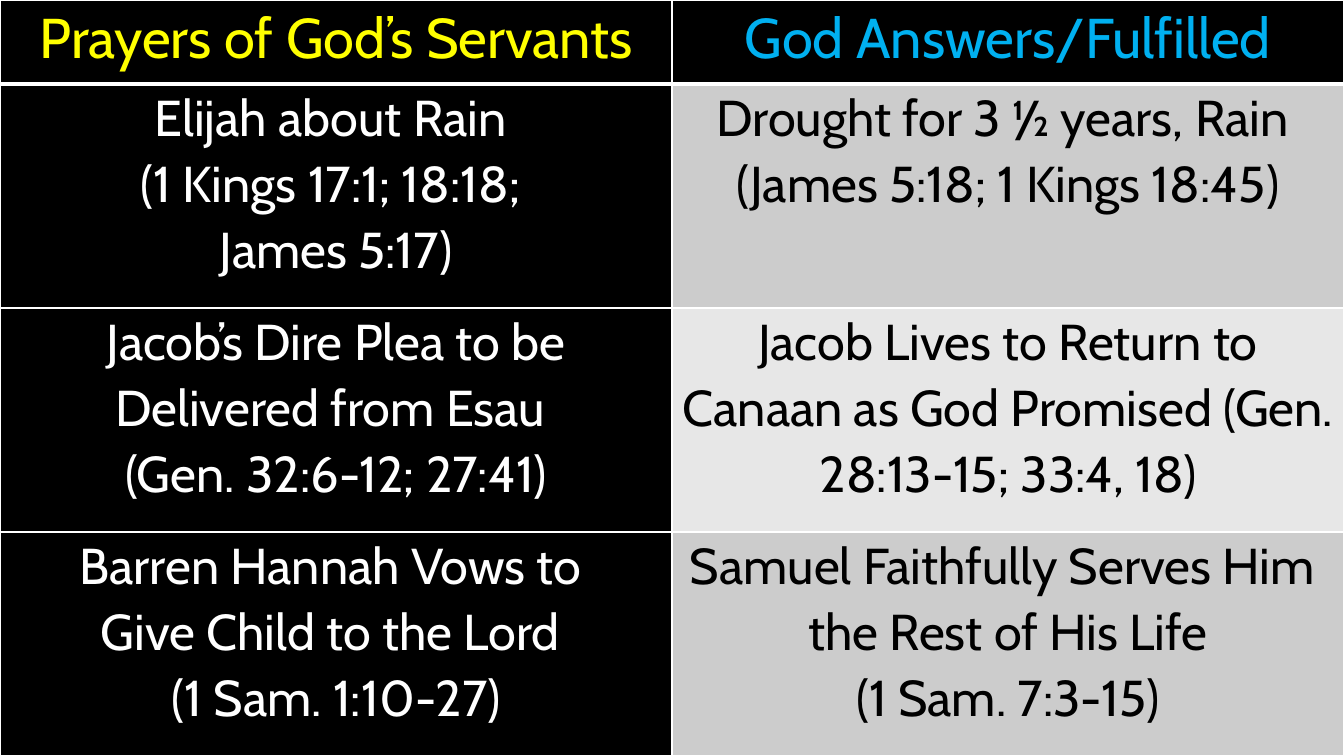
from lxml.etree import SubElement
from pptx import Presentation
from pptx.dml.color import RGBColor
from pptx.enum.text import PP_ALIGN as Align
from pptx.oxml.ns import qn
from pptx.util import Pt

HEADINGS = [("Prayers of God’s Servants", "FFFF00"), ("God Answers/Fulfilled", "00B0F0")]
PRAYERS = [
    (["Elijah about Rain ", "(1 Kings 17:1; 18:18; ", "James 5:17)"],
     ["Drought for 3 ½ years, Rain ", "(James 5:18; 1 Kings 18:45)"]),
    (["Jacob’s Dire Plea to be Delivered from Esau ", "(Gen. 32:6-12; 27:41)"],
     ["Jacob Lives to Return to Canaan as God Promised (Gen. 28:13-15; 33:4, 18)"]),
    (["Barren Hannah Vows to ", "Give Child to the Lord ", "(1 Sam. 1:10-27)"],
     ["Samuel Faithfully Serves Him ", "the Rest of His Life", "(1 Sam. 7:3-15)"]),
]
ANSWER_FILLS = ["CCCCCC", "E7E7E7"]
BLACK, WHITE = "000000", "FFFFFF"
WIDTH, HEIGHT, HEADING_HEIGHT = 960, 540, 60


def paint(fill, color):
    fill.solid()
    fill.fore_color.rgb = RGBColor.from_string(color)


def write(cell, lines, size=36, color=WHITE, font="Cabin"):
    frame = cell.text_frame
    for i, line in enumerate(lines):
        paragraph = frame.add_paragraph() if i else frame.paragraphs[0]
        paragraph.alignment = Align.CENTER
        paragraph.line_spacing = 1.07
        run = paragraph.add_run()
        run.text = line
        run.font.size = Pt(size)
        run.font.name = font
        paint(run.font.fill, color)


def draw_borders(cell, top=1, bottom=1):
    properties = cell._tc.get_or_add_tcPr()
    for side, width in (("L", 1), ("R", 1), ("T", top), ("B", bottom)):
        line = SubElement(properties, qn(f"a:ln{side}"), w=str(Pt(width)))
        SubElement(SubElement(line, qn("a:solidFill")), qn("a:srgbClr"), val=WHITE)


def fill_cell(cell, lines, fill, top=1, bottom=1, **text_format):
    cell.margin_left = cell.margin_right = Pt(5)
    cell.margin_top = cell.margin_bottom = 0
    draw_borders(cell, top, bottom)
    paint(cell.fill, fill)
    write(cell, lines, **text_format)


deck = Presentation()
deck.slide_width, deck.slide_height = Pt(WIDTH), Pt(HEIGHT)
slide = deck.slides.add_slide(deck.slide_layouts[6])
paint(slide.background.fill, BLACK)

table = slide.shapes.add_table(len(PRAYERS) + 1, len(HEADINGS), 0, 0, Pt(WIDTH), Pt(HEIGHT)).table
table.rows[0].height = Pt(HEADING_HEIGHT)
for column, (heading, color) in enumerate(HEADINGS):
    fill_cell(table.cell(0, column), [heading], BLACK, bottom=3, size=40, color=color)

for row, (prayer, answer) in enumerate(PRAYERS, 1):
    table.rows[row].height = Pt((HEIGHT - HEADING_HEIGHT) / len(PRAYERS))
    top = 3 if row == 1 else 1
    fill_cell(table.cell(row, 0), prayer, BLACK, top=top)
    fill_cell(table.cell(row, 1), answer, ANSWER_FILLS[(row - 1) % 2], top=top, color=BLACK)

deck.save("out.pptx")
